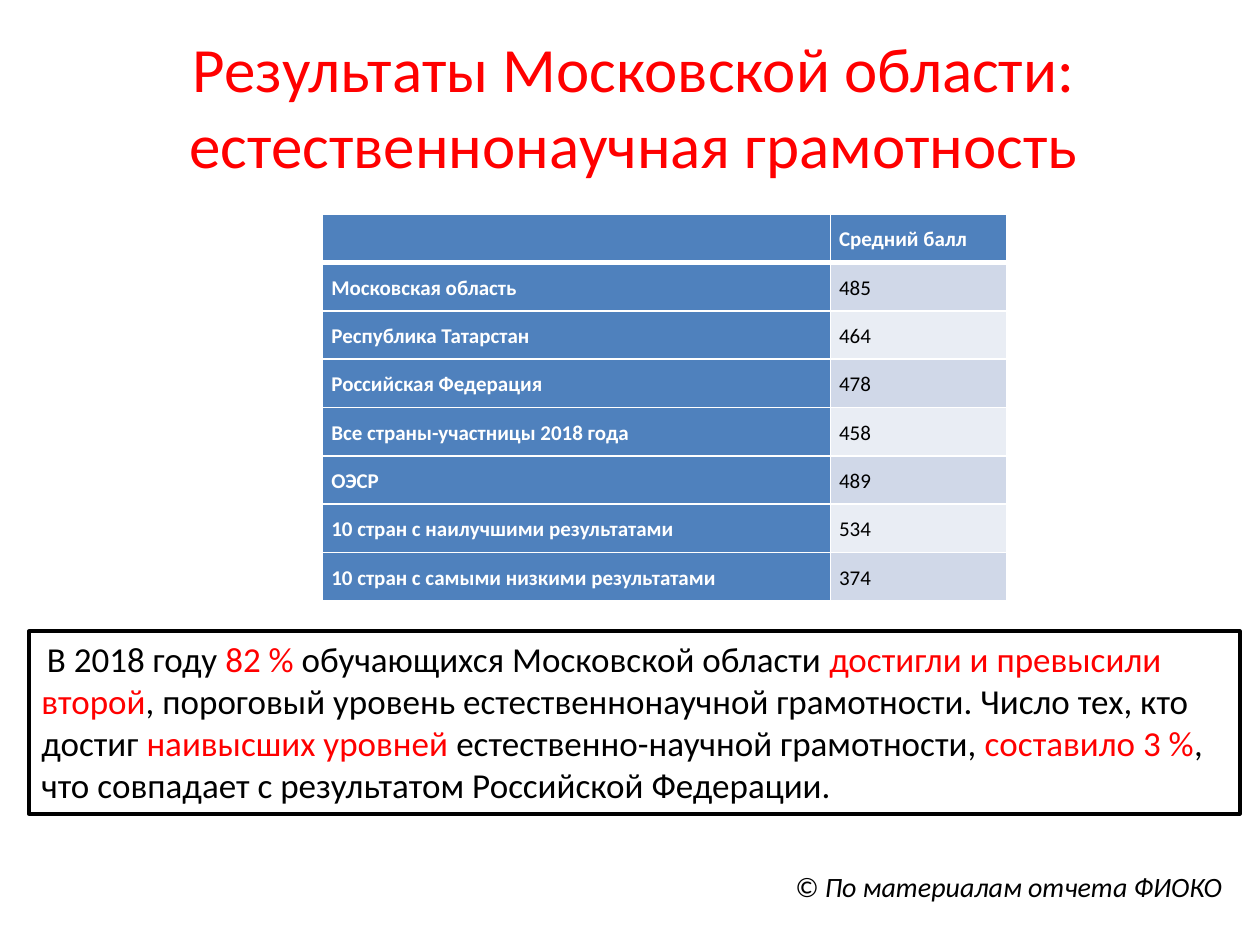
from typing import Any, NamedTuple

from lxml.etree import SubElement
from pptx import Presentation
from pptx.dml.color import RGBColor
from pptx.enum.shapes import MSO_SHAPE
from pptx.enum.text import MSO_ANCHOR, PP_ALIGN
from pptx.oxml.ns import qn
from pptx.util import Inches, Pt

RED = RGBColor(0xFF, 0x00, 0x00)
BLACK = RGBColor(0x00, 0x00, 0x00)
WHITE = RGBColor(0xFF, 0xFF, 0xFF)
BLUE = RGBColor(0x4F, 0x81, 0xBD)
BAND_DARK = RGBColor(0xD0, 0xD8, 0xE8)
BAND_LIGHT = RGBColor(0xE9, 0xED, 0xF4)


class Score(NamedTuple):
    group: str
    points: str


class Phrase(NamedTuple):
    text: str
    color: RGBColor = BLACK
    size: float = 20


SCORES = [
    Score("", "Средний балл"),
    Score("Московская область", "485"),
    Score("Республика Татарстан", "464"),
    Score("Российская Федерация", "478"),
    Score("Все страны-участницы 2018 года", "458"),
    Score("ОЭСР", "489"),
    Score("10 стран с наилучшими результатами", "534"),
    Score("10 стран с самыми низкими результатами", "374"),
]

SUMMARY = [
    Phrase(" ", size=14),
    Phrase("В 2018 году "),
    Phrase("82 %", RED),
    Phrase(" обучающихся Московской области "),
    Phrase("достигли и превысили второй", RED),
    Phrase(", пороговый уровень естественнонаучной грамотности. Число тех, кто достиг "),
    Phrase("наивысших уровней ", RED),
    Phrase("естественно-научной грамотности, "),
    Phrase("составило 3 %", RED),
    Phrase(", что совпадает с результатом Российской Федерации."),
]


def set_attributes(target: Any, values: dict[str, Any]) -> None:
    for name, value in values.items():
        setattr(target, name, value)


def place(shape: Any, left: float, top: float, width: float, height: float) -> None:
    set_attributes(shape, {"left": Inches(left), "top": Inches(top),
                           "width": Inches(width), "height": Inches(height)})


def add_phrase(paragraph: Any, phrase: Phrase, **style: Any) -> None:
    run = paragraph.add_run()
    run.text = phrase.text
    set_attributes(run.font, {"name": "Calibri", "size": Pt(phrase.size), **style})
    run.font.color.rgb = phrase.color


def add_borders(cell: Any, bottom_width: float) -> None:
    properties = cell._tc.get_or_add_tcPr()
    widths = {"a:lnL": 1, "a:lnR": 1, "a:lnT": 1, "a:lnB": bottom_width}
    for tag, width in widths.items():
        line = SubElement(properties, qn(tag), w=str(Pt(width)))
        fill = SubElement(line, qn("a:solidFill"))
        SubElement(fill, qn("a:srgbClr"), val=str(WHITE))


def format_cell(cell: Any, text: str, is_heading: bool, fill: RGBColor, bottom_width: float) -> None:
    set_attributes(cell, {"margin_left": Inches(0.07), "margin_right": Inches(0.07),
                          "margin_top": 0, "margin_bottom": 0})
    add_borders(cell, bottom_width)
    cell.fill.solid()
    cell.fill.fore_color.rgb = fill
    if text:
        paragraph = cell.text_frame.paragraphs[0]
        set_attributes(paragraph, {"alignment": PP_ALIGN.JUSTIFY, "line_spacing": 1.5})
        add_phrase(paragraph, Phrase(text, WHITE if is_heading else BLACK, 12), bold=is_heading)


def add_title(slide: Any) -> None:
    title = slide.shapes.title
    place(title, 0.53, 0.21, 9, 1.25)
    set_attributes(title.text_frame, {"vertical_anchor": MSO_ANCHOR.MIDDLE, "word_wrap": True})
    paragraph = title.text_frame.paragraphs[0]
    paragraph.alignment = PP_ALIGN.CENTER
    add_phrase(paragraph, Phrase("Результаты Московской области: естественнонаучная грамотность", RED, 36))


def add_score_table(slide: Any) -> None:
    frame = slide.shapes.add_table(len(SCORES), 2, Inches(2.56), Inches(1.7), Inches(5.43), Inches(3.07))
    table = frame.table
    table.columns[0].width = Inches(4.03)
    table.columns[1].width = Inches(1.4)
    for row, score in enumerate(SCORES):
        band = BAND_DARK if row % 2 else BAND_LIGHT
        for column, text in enumerate(score):
            is_heading = row == 0 or column == 0
            format_cell(table.cell(row, column), text, is_heading,
                        BLUE if is_heading else band, 3 if row == 0 else 1)


def add_summary(slide: Any) -> None:
    box = slide.shapes.add_shape(MSO_SHAPE.RECTANGLE, Inches(0.23), Inches(5.01), Inches(9.61), Inches(1.45))
    box.shadow.inherit = False
    box.fill.solid()
    box.fill.fore_color.rgb = WHITE
    box.line.color.rgb = BLACK
    box.line.width = Pt(2)
    set_attributes(box.text_frame, {"word_wrap": True, "vertical_anchor": MSO_ANCHOR.TOP})
    paragraph = box.text_frame.paragraphs[0]
    paragraph.alignment = PP_ALIGN.LEFT
    for phrase in SUMMARY:
        add_phrase(paragraph, phrase)


def add_credit(slide: Any) -> None:
    box = slide.shapes.add_textbox(Inches(0.02), Inches(6.85), Inches(9.78), Inches(0.37))
    box.text_frame.word_wrap = True
    paragraph = box.text_frame.paragraphs[0]
    paragraph.alignment = PP_ALIGN.RIGHT
    add_phrase(paragraph, Phrase("© По материалам отчета ФИОКО", size=16), italic=True)


def main() -> None:
    presentation = Presentation()
    set_attributes(presentation, {"slide_width": Inches(10), "slide_height": Inches(7.5)})
    slide = presentation.slides.add_slide(presentation.slide_layouts[5])
    add_title(slide)
    add_score_table(slide)
    add_summary(slide)
    add_credit(slide)
    presentation.save("out.pptx")


if __name__ == "__main__":
    main()
